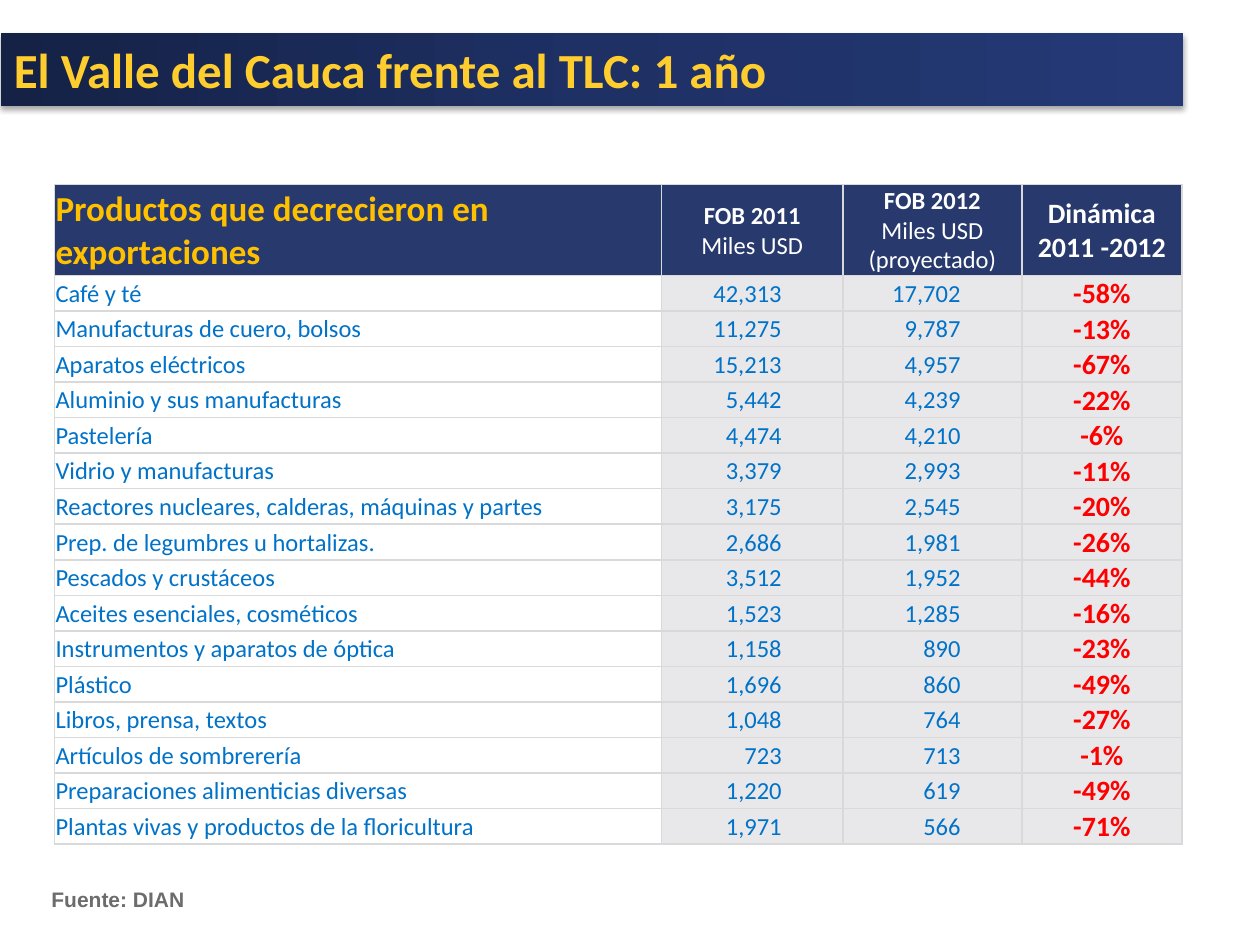
from lxml import etree
from pptx import Presentation
from pptx.dml.color import RGBColor
from pptx.enum.text import MSO_ANCHOR, MSO_AUTO_SIZE, PP_ALIGN
from pptx.oxml import parse_xml
from pptx.oxml.ns import nsdecls, qn
from pptx.util import Pt

LEFT, CENTER, RIGHT = PP_ALIGN.LEFT, PP_ALIGN.CENTER, PP_ALIGN.RIGHT
MIDDLE = MSO_ANCHOR.MIDDLE
FIXED_SIZE = MSO_AUTO_SIZE.NONE

WHITE = RGBColor(0xFF, 0xFF, 0xFF)
NAVY = RGBColor(0x27, 0x39, 0x6D)
AMBER = RGBColor(0xFF, 0xC0, 0x00)
GOLD = RGBColor(0xFF, 0xCD, 0x2D)
BLUE = RGBColor(0x00, 0x72, 0xC8)
RED = RGBColor(0xFF, 0x00, 0x00)
PALE_GRAY = RGBColor(0xE8, 0xE8, 0xEB)
BORDER_GRAY = RGBColor(0xD9, 0xD9, 0xD9)
SOURCE_GRAY = RGBColor(0x6C, 0x6C, 0x6C)
BLACK = RGBColor(0x00, 0x00, 0x00)
BANNER_STOPS = [
    (0, RGBColor(0x15, 0x22, 0x46)),
    (50, RGBColor(0x1E, 0x30, 0x64)),
    (100, RGBColor(0x24, 0x39, 0x76)),
]

COLUMN_WIDTHS = [347, 103.7, 102.2, 91.5]
HEADER_HEIGHT = 52
ROW_HEIGHT = 20.25
CELL_INSET = 0.72
NUMBER_INSET = 35

HEADERS = [
    [("Productos que decrecieron en exportaciones", 20, AMBER, True)],
    [("FOB 2011", 14, WHITE, True), ("Miles USD", 14, WHITE, False)],
    [("FOB 2012", 14, WHITE, True), ("Miles USD (proyectado)", 14, WHITE, False)],
    [("Dinámica 2011 -2012", 16, WHITE, True)],
]
EXPORTS = [
    ("Café y té", 42313, 17702, -58),
    ("Manufacturas de cuero, bolsos", 11275, 9787, -13),
    ("Aparatos eléctricos", 15213, 4957, -67),
    ("Aluminio y sus manufacturas", 5442, 4239, -22),
    ("Pastelería", 4474, 4210, -6),
    ("Vidrio y manufacturas", 3379, 2993, -11),
    ("Reactores nucleares, calderas, máquinas y partes", 3175, 2545, -20),
    ("Prep. de legumbres u hortalizas.", 2686, 1981, -26),
    ("Pescados y crustáceos", 3512, 1952, -44),
    ("Aceites esenciales, cosméticos", 1523, 1285, -16),
    ("Instrumentos y aparatos de óptica", 1158, 890, -23),
    ("Plástico", 1696, 860, -49),
    ("Libros, prensa, textos", 1048, 764, -27),
    ("Artículos de sombrerería", 723, 713, -1),
    ("Preparaciones alimenticias diversas", 1220, 619, -49),
    ("Plantas vivas y productos de la floricultura", 1971, 566, -71),
]


def style_paragraph(paragraph, size, color, bold, align=LEFT, font_name="Calibri"):
    """Align a paragraph and format its runs."""
    paragraph.alignment = align
    for run in paragraph.runs:
        run.font.name = font_name
        run.font.size = Pt(size)
        run.font.bold = bold
        run.font.color.rgb = color


def add_borders(cell):
    """Draw a thin gray line on the four sides of a cell."""
    properties = cell._tc.get_or_add_tcPr()
    for position, side in enumerate(("lnL", "lnR", "lnT", "lnB")):
        border = parse_xml(
            f'<a:{side} {nsdecls("a")} w="{Pt(1)}"><a:solidFill>'
            f'<a:srgbClr val="{BORDER_GRAY}"/></a:solidFill></a:{side}>'
        )
        properties.insert(position, border)


def fill_cell(cell, lines, fill, align, right_inset=CELL_INSET):
    """Write formatted lines into a filled and bordered cell."""
    cell.fill.solid()
    cell.fill.fore_color.rgb = fill
    cell.vertical_anchor = MIDDLE
    cell.margin_left = cell.margin_top = Pt(CELL_INSET)
    cell.margin_right = Pt(right_inset)
    cell.margin_bottom = Pt(0)
    cell.text_frame.text = "\n".join(line[0] for line in lines)
    for paragraph, (_, size, color, bold) in zip(cell.text_frame.paragraphs, lines):
        style_paragraph(paragraph, size, color, bold, align)
    add_borders(cell)


def add_banner_title(slide, text):
    """Turn the title placeholder into a gradient banner with a shadow."""
    banner = slide.shapes.title
    banner.left, banner.top = Pt(0.7), Pt(18.9)
    banner.width, banner.height = Pt(675.4), Pt(41.4)
    frame = banner.text_frame
    frame.text = text
    frame.word_wrap = True
    frame.auto_size = FIXED_SIZE
    frame.vertical_anchor = MIDDLE
    style_paragraph(frame.paragraphs[0], 28, GOLD, True)
    stops = "".join(
        f'<a:gs pos="{percent * 1000}"><a:srgbClr val="{color}"/></a:gs>'
        for percent, color in BANNER_STOPS
    )
    properties = banner._element.spPr
    properties.append(parse_xml(
        f'<a:gradFill {nsdecls("a")} rotWithShape="1"><a:gsLst>{stops}</a:gsLst>'
        '<a:lin ang="0" scaled="0"/></a:gradFill>'
    ))
    effects = etree.SubElement(properties, qn("a:effectLst"))
    effects.append(parse_xml(
        f'<a:outerShdw {nsdecls("a")} blurRad="{Pt(3)}" dist="{Pt(2)}" dir="5400000" '
        f'rotWithShape="0"><a:srgbClr val="{BLACK}"><a:alpha val="35000"/></a:srgbClr>'
        '</a:outerShdw>'
    ))


def add_export_table(slide):
    """Add the table of products whose exports fell."""
    height = HEADER_HEIGHT + ROW_HEIGHT * len(EXPORTS)
    table = slide.shapes.add_table(
        len(EXPORTS) + 1, len(COLUMN_WIDTHS),
        Pt(31), Pt(105.5), Pt(sum(COLUMN_WIDTHS)), Pt(height),
    ).table
    table.horz_banding = False
    for column, width in zip(table.columns, COLUMN_WIDTHS):
        column.width = Pt(width)
    for row in table.rows:
        row.height = Pt(ROW_HEIGHT)
    table.rows[0].height = Pt(HEADER_HEIGHT)
    for index, lines in enumerate(HEADERS):
        fill_cell(table.cell(0, index), lines, NAVY, CENTER if index else LEFT)
    for index, (product, fob_2011, fob_2012, change) in enumerate(EXPORTS, 1):
        fill_cell(table.cell(index, 0), [(product, 14, BLUE, False)], WHITE, LEFT)
        for column, amount in enumerate((fob_2011, fob_2012), 1):
            fill_cell(table.cell(index, column), [(f"{amount:,}", 14, BLUE, False)],
                      PALE_GRAY, RIGHT, NUMBER_INSET)
        fill_cell(table.cell(index, 3), [(f"{change}%", 16, RED, True)],
                  PALE_GRAY, CENTER)


def add_source_note(slide, text):
    """Add the data source below the table."""
    note = slide.shapes.add_textbox(Pt(22.3), Pt(503.3), Pt(185.8), Pt(21.6))
    note.text_frame.word_wrap = True
    note.text_frame.text = text
    style_paragraph(note.text_frame.paragraphs[0], 12, SOURCE_GRAY, True, LEFT, "Arial")


def main():
    """Build the slide and save it."""
    presentation = Presentation()
    presentation.slide_width, presentation.slide_height = Pt(720), Pt(540)
    slide = presentation.slides.add_slide(presentation.slide_layouts[5])
    add_export_table(slide)
    add_banner_title(slide, "El Valle del Cauca frente al TLC: 1 año")
    add_source_note(slide, "Fuente: DIAN")
    presentation.save("out.pptx")


if __name__ == "__main__":
    main()
